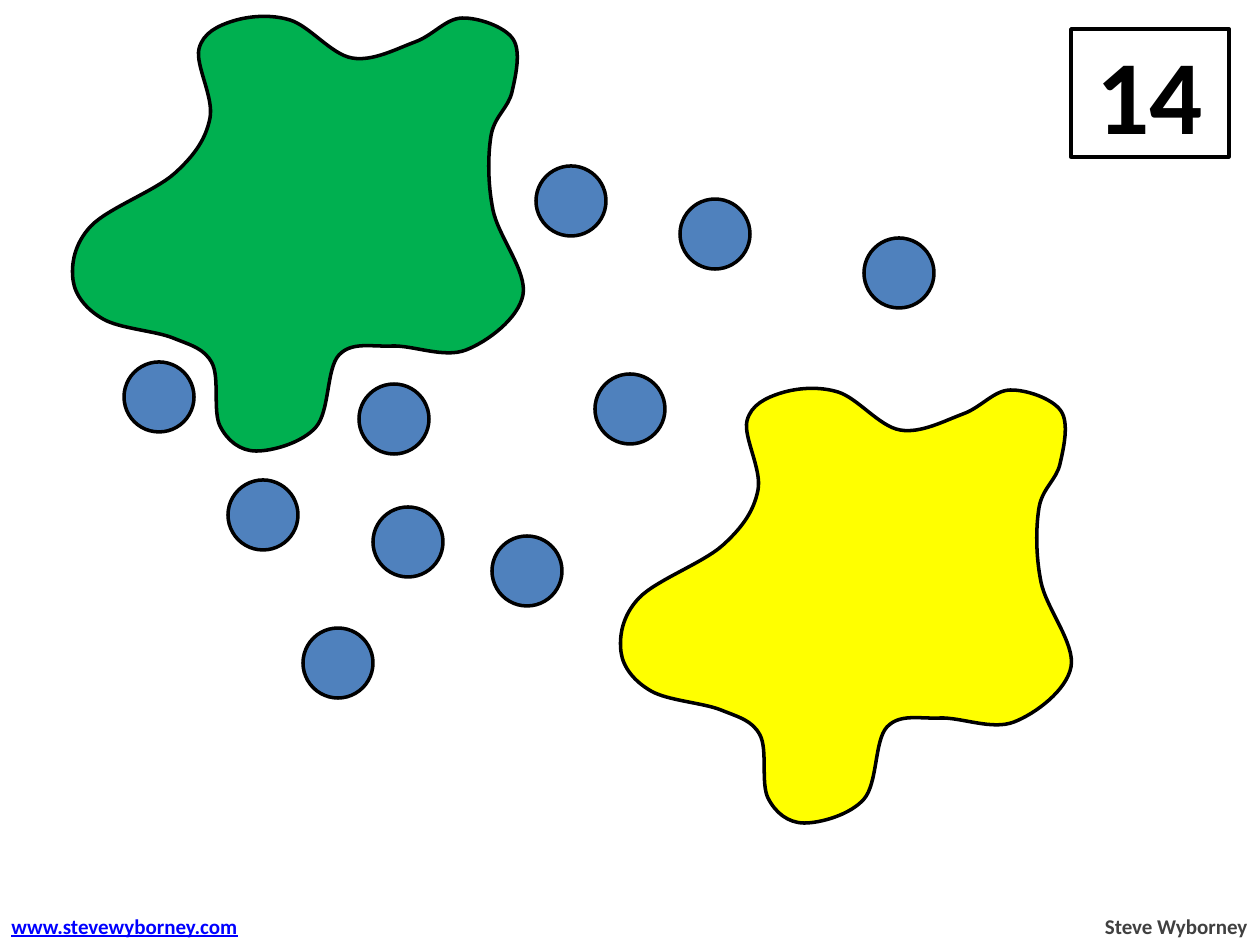
from dataclasses import dataclass

from lxml import etree
from pptx import Presentation
from pptx.dml.color import RGBColor
from pptx.enum.shapes import MSO_SHAPE
from pptx.enum.text import MSO_ANCHOR, MSO_AUTO_SIZE, PP_ALIGN
from pptx.oxml.ns import qn
from pptx.util import Emu, Pt

RECT, OVAL = MSO_SHAPE.RECTANGLE, MSO_SHAPE.OVAL
LEFT, CENTER, RIGHT = PP_ALIGN.LEFT, PP_ALIGN.CENTER, PP_ALIGN.RIGHT
MIDDLE, FIT = MSO_ANCHOR.MIDDLE, MSO_AUTO_SIZE.SHAPE_TO_FIT_TEXT
PX = 914400 / 126  # EMU in one px


@dataclass(frozen=True)
class Theme:
    font: str = "Calibri"
    black: str = "000000"
    white: str = "FFFFFF"
    gray: str = "404040"
    link: str = "0000FF"
    dot: str = "4F81BD"
    green: str = "00B050"
    yellow: str = "FFFF00"
    number_size: int = 60
    footer_size: int = 12
    line_width: int = 2


theme = Theme()


def write(sp, text, size, color=theme.black, align=LEFT, underline=None):
    p = sp.text_frame.paragraphs[0]
    p.alignment = align
    r = p.add_run()
    r.text = text
    r.font.name, r.font.size = theme.font, Pt(size)
    r.font.bold, r.font.underline = True, underline
    r.font.color.rgb = RGBColor.from_string(color)


def paint(sp, fill):
    sp.shadow.inherit = False
    sp.fill.solid()
    sp.fill.fore_color.rgb = RGBColor.from_string(fill)
    sp.line.color.rgb = RGBColor.from_string(theme.black)
    sp.line.width = Pt(theme.line_width)


prs = Presentation()
prs.slide_width, prs.slide_height = round(1260 * PX), round(945 * PX)
s = prs.slides.add_slide(prs.slide_layouts[6])

# Number card
card = s.shapes.add_shape(RECT, *[Emu(round(v * PX)) for v in (1071, 29, 158, 128)])
paint(card, theme.white)
card.text_frame.vertical_anchor = MIDDLE
write(card, "14", theme.number_size, align=CENTER)

# Footer
for x, w, text, color, align, underline in [
    (1091, 169, "Steve Wyborney", theme.gray, RIGHT, None),
    (-1, 258, "www.stevewyborney.com", theme.link, LEFT, True),
]:
    box = s.shapes.add_textbox(*[Emu(round(v * PX)) for v in (x, 907, w, 38)])
    box.text_frame.word_wrap = False
    box.text_frame.auto_size = FIT
    write(box, text, theme.footer_size, color, align, underline)

# Fourteen dots, some of them covered by the splats
DOT = 70
for x, y in [
    (338, 236), (373, 507), (777, 410), (359, 384), (645, 606), (595, 374), (680, 199),
    (864, 238), (228, 480), (303, 628), (492, 536), (124, 362), (536, 166), (970, 431),
]:
    dot = s.shapes.add_shape(OVAL, *[Emu(round(v * PX)) for v in (x, y, DOT, DOT)])
    paint(dot, theme.dot)

# Splats: closed smooth curves (Catmull-Rom) through these points
knots = [
    (103, 319), (73, 280), (91, 226), (175, 173), (210, 118), (199, 49),
    (233, 21), (290, 20), (352, 58), (415, 42), (462, 18), (513, 39),
    (512, 92), (491, 136), (493, 210), (523, 295), (466, 350), (392, 346),
    (339, 355), (316, 427), (256, 451), (220, 426), (212, 363), (173, 338),
]
left, top = (min(values) for values in zip(*knots))

for dx, dy, fill in [(0, 0, theme.green), (548, 372, theme.yellow)]:
    points = [(round((x + dx) * PX), round((y + dy) * PX)) for x, y in knots]
    builder = s.shapes.build_freeform(*points[0])
    builder.add_line_segments(points[1:] + points[:1], close=True)
    splat = builder.convert_to_shape()
    paint(splat, fill)

    # Bend each straight side into a cubic curve
    for i, side in enumerate(list(splat._element.iter(qn("a:lnTo")))):
        a, b, c, d = [knots[(i + k) % len(knots)] for k in (-1, 0, 1, 2)]
        curve = etree.Element(qn("a:cubicBezTo"))
        for x, y in [
            (b[0] + (c[0] - a[0]) / 6, b[1] + (c[1] - a[1]) / 6),
            (c[0] - (d[0] - b[0]) / 6, c[1] - (d[1] - b[1]) / 6),
            c,
        ]:
            etree.SubElement(curve, qn("a:pt"), x=str(round((x - left) * PX)),
                             y=str(round((y - top) * PX)))
        side.getparent().replace(side, curve)

prs.save("out.pptx")
